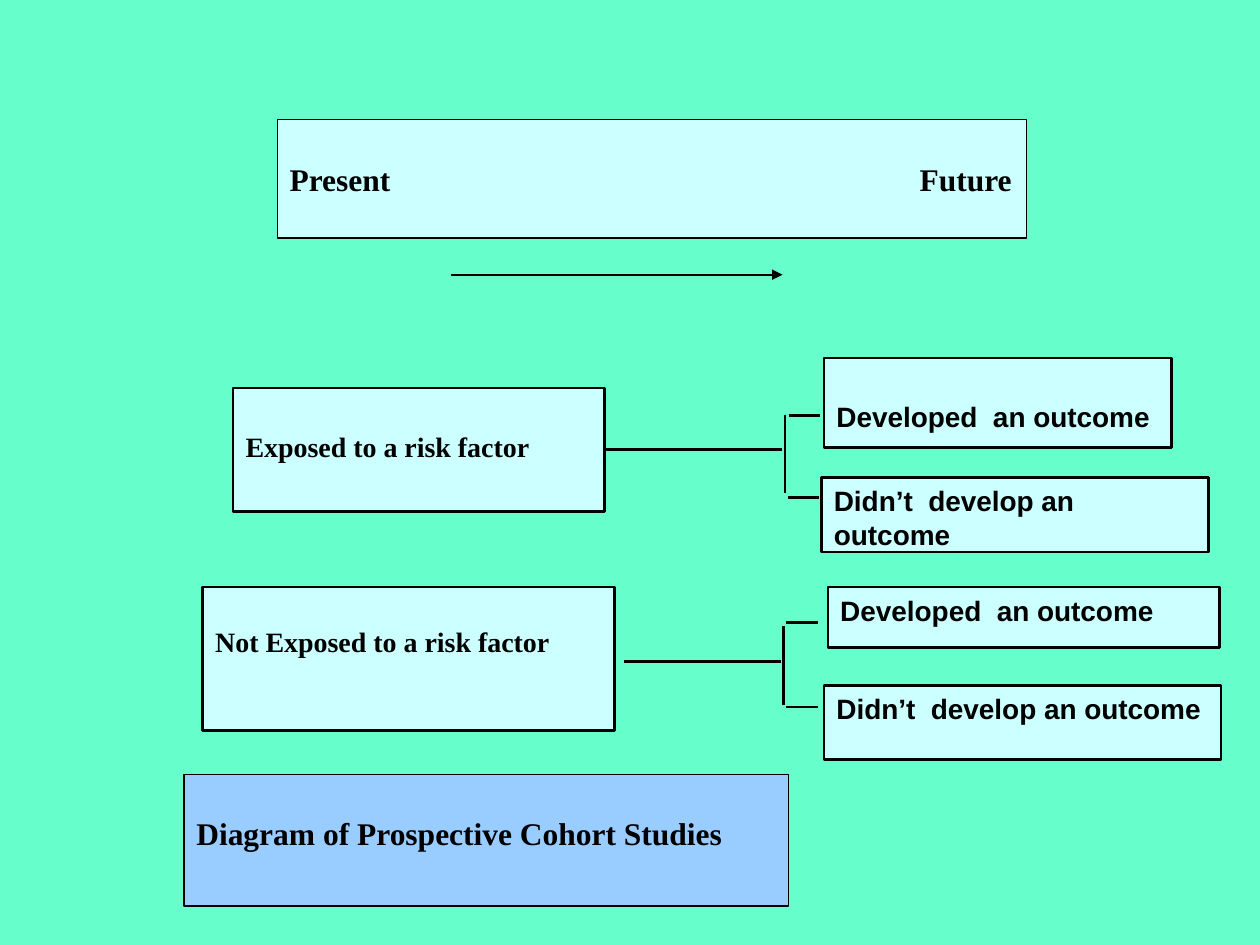
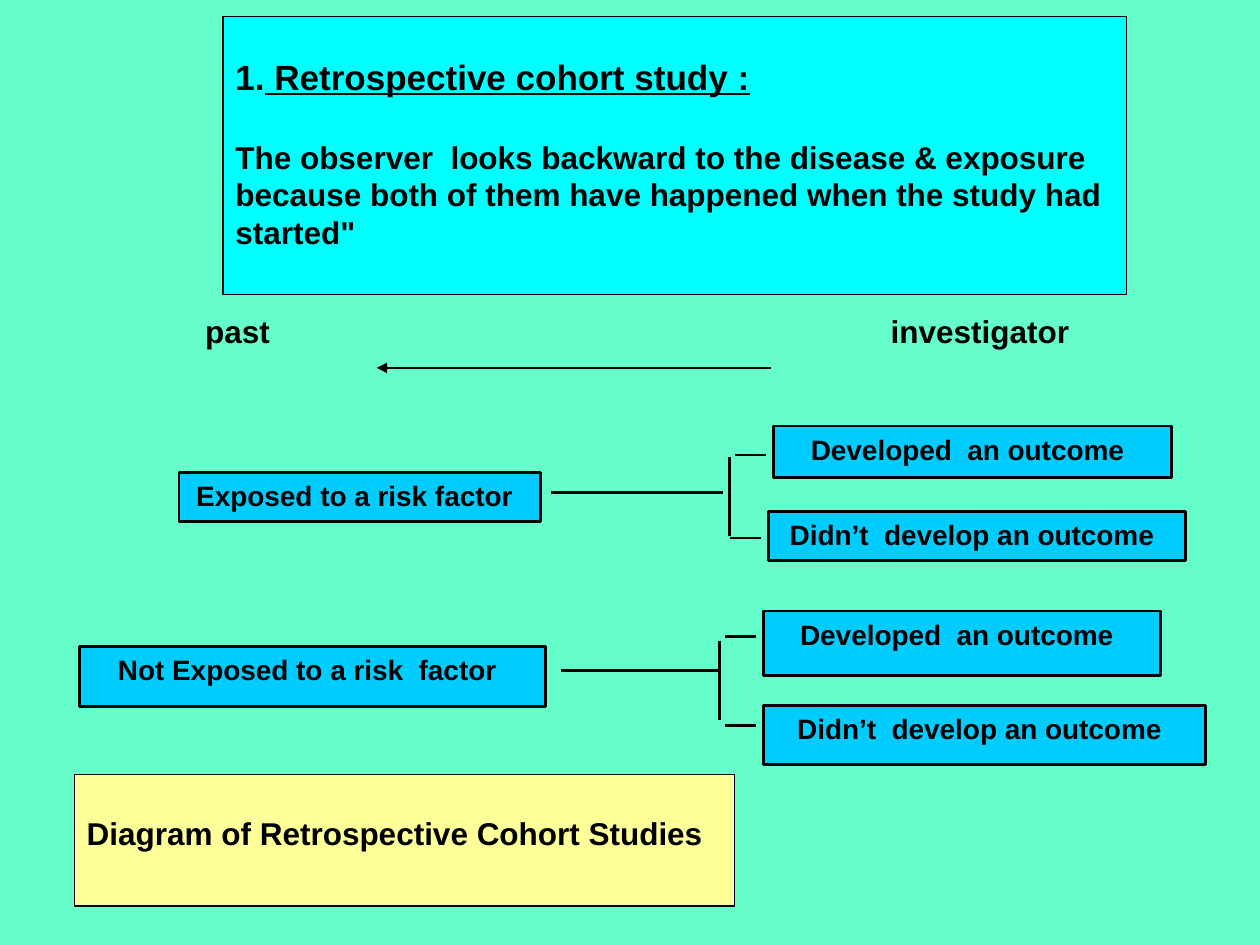
import dataclasses

import lxml.etree
import pptx
import pptx.dml.color
import pptx.enum.shapes
import pptx.enum.text
import pptx.oxml.ns
import pptx.util


@dataclasses.dataclass(frozen=True)
class Theme:
    """Colours, fonts, type sizes and line widths of the deck."""
    back: str = "66FFCC"
    ink: str = "000000"
    pale: str = "CCFFFF"
    periwinkle: str = "99CCFF"
    sky: str = "00CCFF"
    cyan: str = "00FFFF"
    cream: str = "FFFF99"
    sans: str = "Arial"
    serif: str = "Times New Roman"
    heading: int = 20
    body: int = 18
    label: int = 16
    heavy: float = 1.5
    medium: float = 1
    thin: float = 0.75


THEME = Theme()
COLUMNS, ROWS = 100, 75
WIDTH, HEIGHT = pptx.util.Inches(10), pptx.util.Inches(7.5)
SPINE_ROWS, TICK_COLUMNS = 6.25, 2.5
ALIGN = pptx.enum.text.PP_ALIGN
ANCHOR = pptx.enum.text.MSO_ANCHOR


def rgb(value):
    """Turn a hex string into a colour."""
    return pptx.dml.color.RGBColor.from_string(value)


def cols(n):
    """Width of n grid columns."""
    return round(WIDTH * n / COLUMNS)


def rows(n):
    """Height of n grid rows."""
    return round(HEIGHT * n / ROWS)


def sub(parent, tag, **attrs):
    """Append a drawing element to a parent."""
    return lxml.etree.SubElement(parent, pptx.oxml.ns.qn(tag), **attrs)


def write(tf, text, font=THEME.sans, size=THEME.label, underline=False,
          align=ALIGN.LEFT, before=None, tab=None, same_line=False):
    """Add a formatted bold run, on a new paragraph unless told otherwise."""
    p = tf.paragraphs[-1]
    if p.runs and not same_line:
        p = tf.add_paragraph()
    if not same_line:
        p.alignment = align
    if before:
        p.space_before = pptx.util.Pt(before)
    if tab:
        tabs = sub(p._p.get_or_add_pPr(), "a:tabLst")
        sub(tabs, "a:tab", pos=str(cols(tab)), algn="l")
    r = p.add_run()
    r.text = text
    r.font.name = font
    r.font.size = pptx.util.Pt(size)
    r.font.bold = True
    r.font.underline = underline
    r.font.color.rgb = rgb(THEME.ink)


class Deck:
    """Holds the style and the current slide."""

    def __init__(self, theme):
        """Start an empty deck."""
        self.theme = theme
        self.prs = pptx.Presentation()
        self.prs.slide_width, self.prs.slide_height = WIDTH, HEIGHT
        self.s = None

    def slide(self):
        """Start a blank slide with the shared background."""
        self.s = self.prs.slides.add_slide(self.prs.slide_layouts[6])
        fill = self.s.background.fill
        fill.solid()
        fill.fore_color.rgb = rgb(self.theme.back)

    def frame(self, sp, drop=0.5, right=1, anchor=ANCHOR.TOP):
        """Set the insets and anchor of a text frame."""
        tf = sp.text_frame
        tf.word_wrap = True
        tf.vertical_anchor = anchor
        tf.margin_left, tf.margin_right = cols(1), cols(right)
        tf.margin_top, tf.margin_bottom = rows(drop), rows(0.5)
        return tf

    def box(self, at, fill, text=None, weight=THEME.heavy, drop=0.5, right=1,
            anchor=ANCHOR.TOP, **fmt):
        """Draw an outlined rectangle with text."""
        x, y, w, h = at
        sp = self.s.shapes.add_shape(
            pptx.enum.shapes.MSO_SHAPE.RECTANGLE,
            cols(x), rows(y), cols(w), rows(h))
        sp.shadow.inherit = False
        sp.fill.solid()
        sp.fill.fore_color.rgb = rgb(fill)
        sp.line.color.rgb = rgb(self.theme.ink)
        sp.line.width = pptx.util.Pt(weight)
        tf = self.frame(sp, drop, right, anchor)
        if text:
            write(tf, text, **fmt)
        return sp

    def centred(self, at, text):
        """Draw a sky blue box with a centred label."""
        return self.box(at, self.theme.sky, text, right=1.8, align=ALIGN.CENTER)

    def caption(self, at, fill, text, font):
        """Draw the box that names the diagram."""
        return self.box(at, fill, text, self.theme.thin, drop=3.1,
                        font=font, size=self.theme.body)

    def label(self, at, text, **fmt):
        """Place plain text."""
        x, y, w, h = at
        sp = self.s.shapes.add_textbox(cols(x), rows(y), cols(w), rows(h))
        write(self.frame(sp), text, **fmt)

    def line(self, x1, y1, x2, y2, weight=THEME.heavy, arrow=False):
        """Draw a straight line, with an arrowhead at its end if asked."""
        sp = self.s.shapes.add_connector(
            pptx.enum.shapes.MSO_CONNECTOR.STRAIGHT,
            cols(x1), rows(y1), cols(x2), rows(y2))
        sp.line.color.rgb = rgb(self.theme.ink)
        sp.line.width = pptx.util.Pt(weight)
        if arrow:
            sub(sp.line._get_or_add_ln(), "a:tailEnd", type="triangle")
        sub(sp._element.spPr, "a:effectLst")
        return sp

    def fork(self, stem, spine, ticks):
        """Draw a stem, a spine and its two ticks, and return the stem."""
        start, end, y = stem
        x, top = spine
        self.line(x, top, x, top + SPINE_ROWS)
        for tick_x, tick_y in ticks:
            self.line(tick_x, tick_y, tick_x + TICK_COLUMNS, tick_y)
        return self.line(start, y, end, y)


def prospective(deck):
    """Build the prospective diagram."""
    t = deck.theme
    deck.slide()
    deck.box((22, 9.5, 59.5, 9.4), t.pale, "Present\tFuture", t.thin,
             anchor=ANCHOR.MIDDLE, font=t.serif, size=t.body, tab=50)
    deck.line(35.8, 21.8, 62.1, 21.8, t.medium, arrow=True)
    exposed = deck.box((18.5, 30.8, 29.5, 9.8), t.pale,
                       "Exposed to a risk factor", drop=3.3, font=t.serif)
    deck.box((16.1, 46.6, 32.7, 11.4), t.pale,
             "Not Exposed to a risk factor", drop=3, font=t.serif)
    deck.box((65.4, 28.4, 27.6, 7.1), t.pale, "Developed  an outcome", drop=3.3)
    deck.box((65.2, 37.9, 30.7, 5.9), t.pale, "Didn’t  develop an outcome")
    deck.box((65.7, 46.6, 31.1, 4.8), t.pale, "Developed  an outcome")
    deck.box((65.4, 54.4, 31.5, 5.9), t.pale, "Didn’t  develop an outcome")
    stem = deck.fork((48, 62.1, 35.7), (62.3, 32.9), [(62.6, 33), (62.5, 39.5)])
    stem.begin_connect(exposed, 3)
    deck.fork((49.5, 62, 52.5), (62.2, 49.7), [(62.4, 49.4), (62.4, 56.1)])
    deck.caption((14.6, 61.5, 48, 10.4), t.periwinkle,
                 "Diagram of Prospective Cohort Studies", t.serif)


def retrospective(deck):
    """Build the retrospective diagram."""
    t = deck.theme
    deck.slide()
    tf = deck.box((17.7, 1.3, 71.7, 22.1), t.cyan, "1.", t.thin,
                  drop=3.1, size=t.heading).text_frame
    write(tf, " Retrospective cohort study :", size=t.heading,
          underline=True, same_line=True)
    write(tf, "The observer  looks backward to the disease & exposure because "
          "both of them have happened when the study had started\"",
          size=t.body, before=23)
    deck.label((15.3, 24.3, 76.2, 3.9), "past\tinvestigator",
               size=t.body, tab=54.4)
    deck.line(61.2, 29.2, 29.9, 29.2, t.medium, arrow=True)
    deck.centred((14.2, 37.5, 28.7, 3.9), "Exposed to a risk factor")
    deck.centred((6.3, 51.3, 37, 4.8), "Not Exposed to a risk  factor")
    deck.centred((61.4, 33.8, 31.6, 4.1), "Developed  an outcome")
    deck.centred((61, 40.6, 33.1, 3.9), "Didn’t  develop an outcome")
    deck.centred((60.6, 48.5, 31.5, 5.1), "Developed  an outcome")
    deck.centred((60.6, 56, 35.1, 4.7), "Didn’t  develop an outcome")
    deck.fork((43.7, 57.4, 39.1), (57.9, 36.3), [(58.3, 36.1), (57.9, 42.7)])
    deck.fork((44.5, 57, 53.2), (57.1, 50.9), [(57.5, 50.5), (57.5, 57.6)])
    deck.caption((5.9, 61.5, 52.4, 10.4), t.cream,
                 "Diagram of Retrospective Cohort Studies", t.sans)


def main():
    """Build and save the deck."""
    deck = Deck(THEME)
    prospective(deck)
    retrospective(deck)
    deck.prs.save("out.pptx")


if __name__ == "__main__":
    main()
